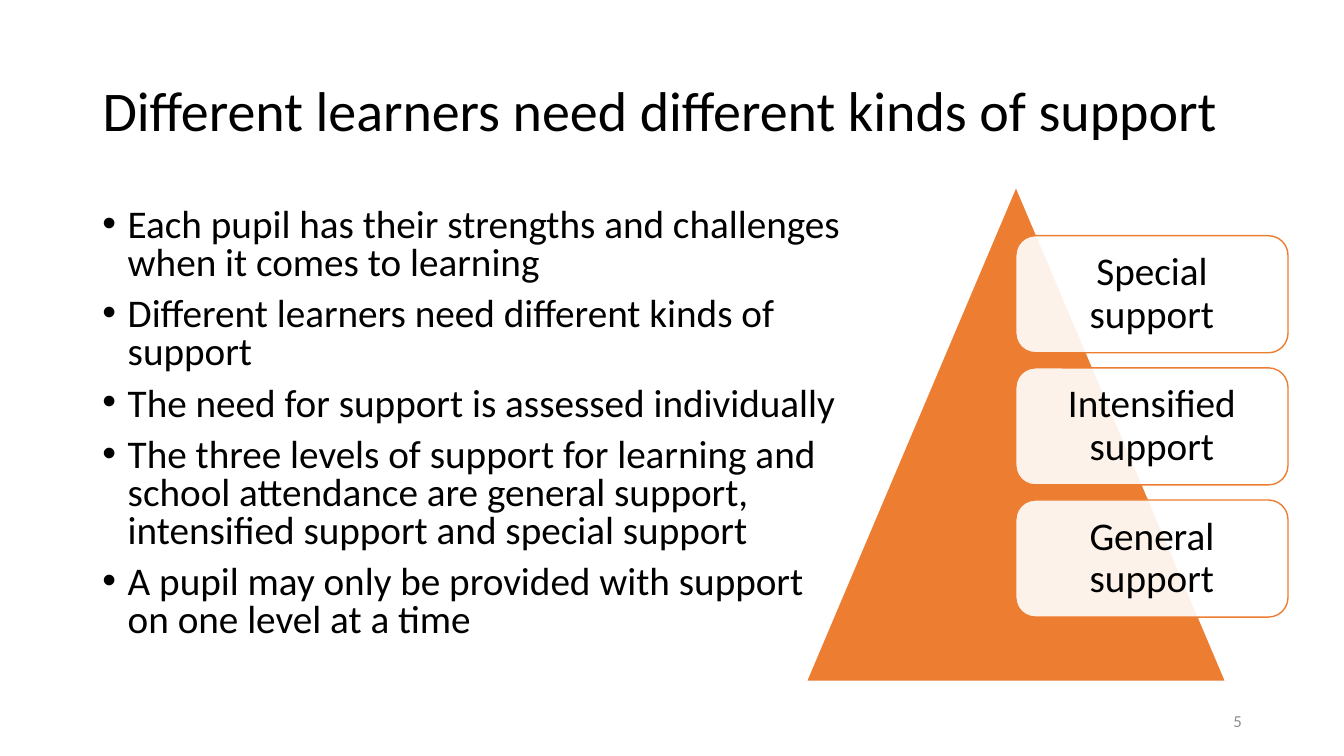
from lxml import etree
from pptx import Presentation
from pptx import util as u
from pptx.dml.color import RGBColor
from pptx.enum import shapes, text
from pptx.oxml.ns import qn

COLORS = {"text": "000000", "accent": "ED7D31", "white": "FFFFFF", "number": "8C8C8C"}
FONT = "Calibri"
POINTS = [
    "Each pupil has their strengths and challenges when it comes to learning",
    "Different learners need different kinds of support",
    "The need for support is assessed individually",
    "The three levels of support for learning and school attendance are general support, "
    "intensified support and special support",
    "A pupil may only be provided with support on one level at a time",
]
LEVELS = ["Special support", "Intensified support", "General support"]
LEVEL_TOP, LEVEL_PITCH = 5.94, 3.33


def add_run(p, words, size, color="text", align=text.PP_ALIGN.LEFT, spacing=1.0):
    p.alignment = align
    p.line_spacing = spacing
    r = p.add_run()
    r.text = words
    r.font.name = FONT
    r.font.size = u.Pt(size)
    r.font.color.rgb = RGBColor.from_string(COLORS[color])


def add_outlined(kind, box, fill, line):
    sp = slide.shapes.add_shape(kind, *map(u.Cm, box))
    sp.shadow.inherit = False
    sp.fill.solid()
    sp.fill.fore_color.rgb = RGBColor.from_string(COLORS[fill])
    sp.line.color.rgb = RGBColor.from_string(COLORS[line])
    sp.line.width = u.Pt(1)
    return sp


prs = Presentation()
prs.slide_width, prs.slide_height = u.Cm(33.87), u.Cm(19.05)
slide = prs.slides.add_slide(prs.slide_layouts[5])

# Title
title = slide.shapes.title
title.left, title.top, title.width, title.height = map(u.Cm, (2.33, 1.02, 29.21, 3.68))
tf = title.text_frame
tf.vertical_anchor = text.MSO_ANCHOR.MIDDLE
add_run(tf.paragraphs[0], "Different learners need different kinds of support", 40, spacing=0.9)

# Bulleted points
body = slide.shapes.add_textbox(*map(u.Cm, (2.33, 5.13, 19.28, 12.09)))
tf = body.text_frame
tf.word_wrap = True
for i, point in enumerate(POINTS):
    p = tf.add_paragraph() if i else tf.paragraphs[0]
    add_run(p, point, 28, spacing=0.8)
    p.space_before = u.Pt(10)
    pPr = p._p.get_or_add_pPr()
    pPr.set("marL", str(u.Cm(0.64)))
    pPr.set("indent", str(-u.Cm(0.64)))
    etree.SubElement(pPr, qn("a:buFont"), typeface="Arial")
    etree.SubElement(pPr, qn("a:buChar"), char="•")

# Slide number
number = slide.shapes.add_textbox(*map(u.Cm, (23.93, 17.65, 7.62, 1.02)))
tf = number.text_frame
tf.word_wrap = True
tf.vertical_anchor = text.MSO_ANCHOR.MIDDLE
add_run(tf.paragraphs[0], "5", 12, "number", text.PP_ALIGN.RIGHT)

# Pyramid with the three levels of support
add_outlined(shapes.MSO_SHAPE.ISOSCELES_TRIANGLE, (20.32, 4.7, 10.57, 12.47), "accent", "white")
for i, level in enumerate(LEVELS):
    box = (25.6, LEVEL_TOP + i * LEVEL_PITCH, 6.86, 2.95)
    sp = add_outlined(shapes.MSO_SHAPE.ROUNDED_RECTANGLE, box, "white", "accent")
    rgb = sp.fill._xPr.find(qn("a:solidFill")).find(qn("a:srgbClr"))
    etree.SubElement(rgb, qn("a:alpha"), val="90000")
    tf = sp.text_frame
    tf.word_wrap = True
    tf.vertical_anchor = text.MSO_ANCHOR.MIDDLE
    tf.margin_left = tf.margin_right = tf.margin_top = tf.margin_bottom = u.Cm(0.3)
    add_run(tf.paragraphs[0], level, 28, align=text.PP_ALIGN.CENTER, spacing=0.9)

prs.save("out.pptx")
